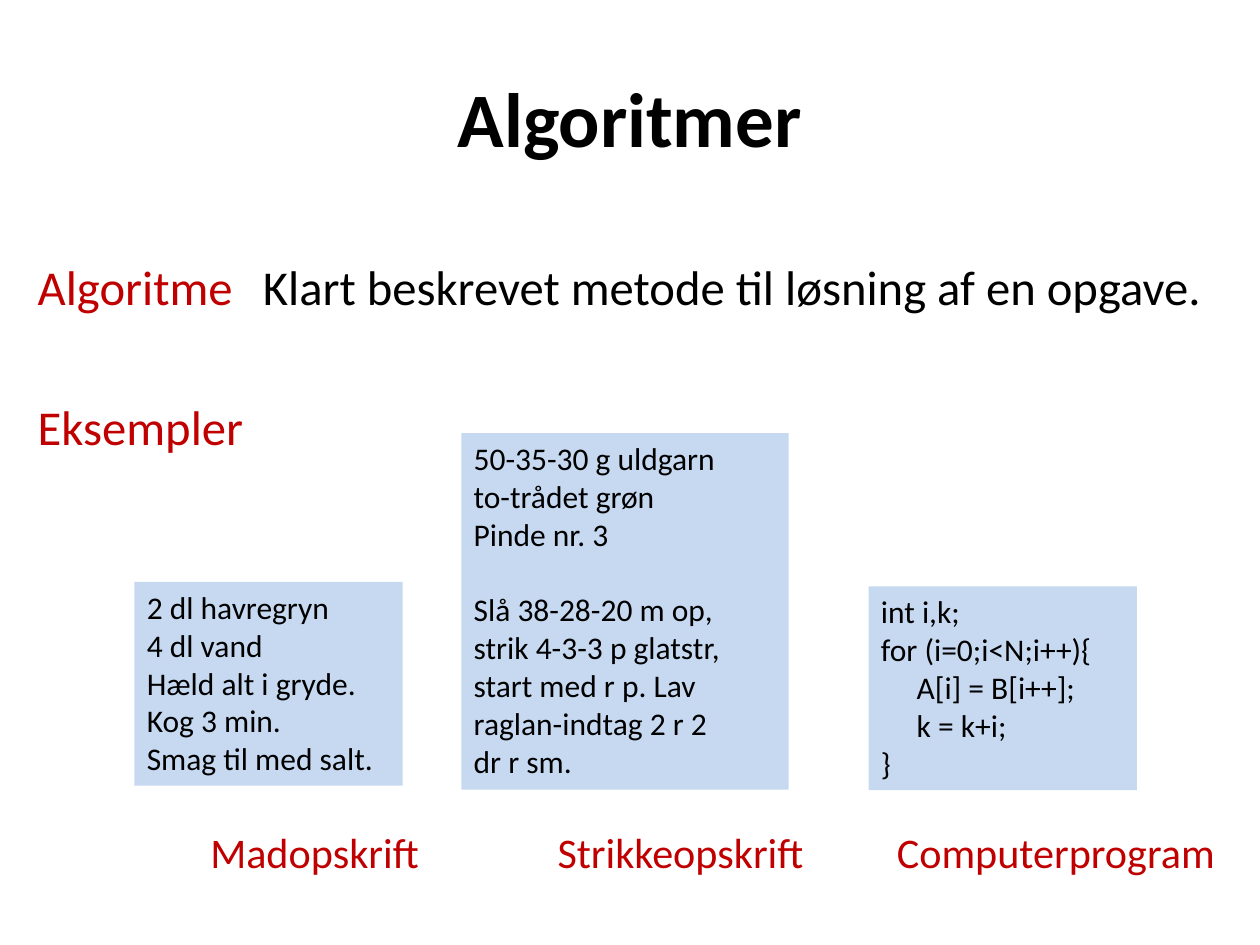
from pptx import Presentation
from pptx.dml.color import RGBColor
from pptx.enum import shapes, text
from pptx.util import Cm, Pt

FONT = "Calibri"
BLACK, RED, PALE_BLUE = "000000", "C00000", "C6D9F1"
SLIDE_WIDTH, SLIDE_HEIGHT = 25.4, 19.05
LINE_HEIGHT = 1.3
BODY_SIZE, CAPTION_SIZE, EXAMPLE_SIZE = 27.8, 24.1, 18
BLANK_LINE = 21.6
CODE_INDENT = 0.72

TITLE = "Algoritmer"
LABELS = [
    ("Algoritme", 0.76, 5.76, BODY_SIZE, RED),
    ("Klart beskrevet metode til løsning af en opgave.", 5.3, 5.76, BODY_SIZE, BLACK),
    ("Eksempler", 0.76, 8.59, BODY_SIZE, RED),
    ("Madopskrift", 4.24, 17.16, CAPTION_SIZE, RED),
    ("Strikkeopskrift", 11.24, 17.16, CAPTION_SIZE, RED),
    ("Computerprogram", 18.08, 17.16, CAPTION_SIZE, RED),
]
EXAMPLES = [
    ((2.71, 11.73, 5.41, 4.11), [
        ("2 dl havregryn", 0, 0),
        ("4 dl vand", 0, 0),
        ("Hæld alt i gryde.", 0, 0),
        ("Kog 3 min.", 0, 0),
        ("Smag til med salt.", 0, 0),
    ]),
    ((9.3, 8.73, 6.6, 7.19), [
        ("50-35-30 g uldgarn", 0, 0),
        ("to-trådet grøn", 0, 0),
        ("Pinde nr. 3", 0, 0),
        ("Slå 38-28-20 m op,", BLANK_LINE, 0),
        ("strik 4-3-3 p glatstr,", 0, 0),
        ("start med r p. Lav", 0, 0),
        ("raglan-indtag 2 r 2", 0, 0),
        ("dr r sm.", 0, 0),
    ]),
    ((17.51, 11.82, 5.41, 4.11), [
        ("int i,k;", 0, 0),
        ("for (i=0;i<N;i++){", 0, 0),
        ("A[i] = B[i++];", 0, CODE_INDENT),
        ("k = k+i;", 0, CODE_INDENT),
        ("}", 0, 0),
    ]),
]


def color(value):
    return RGBColor.from_string(value)


def add_run(paragraph, content, size, ink, bold=False):
    run = paragraph.add_run()
    run.text = content
    run.font.name = FONT
    run.font.size = Pt(size)
    run.font.bold = bold
    run.font.color.rgb = color(ink)


def add_label(slide, content, box, size, ink, bold=False, align=text.PP_ALIGN.LEFT):
    frame = slide.shapes.add_textbox(*map(Cm, box)).text_frame
    frame.word_wrap = True
    frame.vertical_anchor = text.MSO_ANCHOR.MIDDLE
    frame.margin_left = frame.margin_right = 0
    frame.margin_top = frame.margin_bottom = 0
    paragraph = frame.paragraphs[0]
    paragraph.alignment = align
    add_run(paragraph, content, size, ink, bold)


def add_example(slide, box, lines):
    shape = slide.shapes.add_shape(shapes.MSO_SHAPE.RECTANGLE, *map(Cm, box))
    shape.shadow.inherit = False
    shape.fill.solid()
    shape.fill.fore_color.rgb = color(PALE_BLUE)
    shape.line.fill.background()
    frame = shape.text_frame
    frame.word_wrap = True
    frame.vertical_anchor = text.MSO_ANCHOR.TOP
    for index, (content, space, indent) in enumerate(lines):
        paragraph = frame.add_paragraph() if index else frame.paragraphs[0]
        paragraph.alignment = text.PP_ALIGN.LEFT
        paragraph.space_before = Pt(space)
        if indent:
            paragraph._p.get_or_add_pPr().set("marL", str(Cm(indent)))
        add_run(paragraph, content, EXAMPLE_SIZE, BLACK)


def main():
    presentation = Presentation()
    presentation.slide_width = Cm(SLIDE_WIDTH)
    presentation.slide_height = Cm(SLIDE_HEIGHT)
    slide = presentation.slides.add_slide(presentation.slide_layouts[6])
    add_label(slide, TITLE, (1.27, 0.76, 22.86, 3.18), 44, BLACK, True, text.PP_ALIGN.CENTER)
    for content, left, middle, size, ink in LABELS:
        box = (left, middle - LINE_HEIGHT / 2, SLIDE_WIDTH - left, LINE_HEIGHT)
        add_label(slide, content, box, size, ink)
    for box, lines in EXAMPLES:
        add_example(slide, box, lines)
    presentation.save("out.pptx")


if __name__ == "__main__":
    main()
